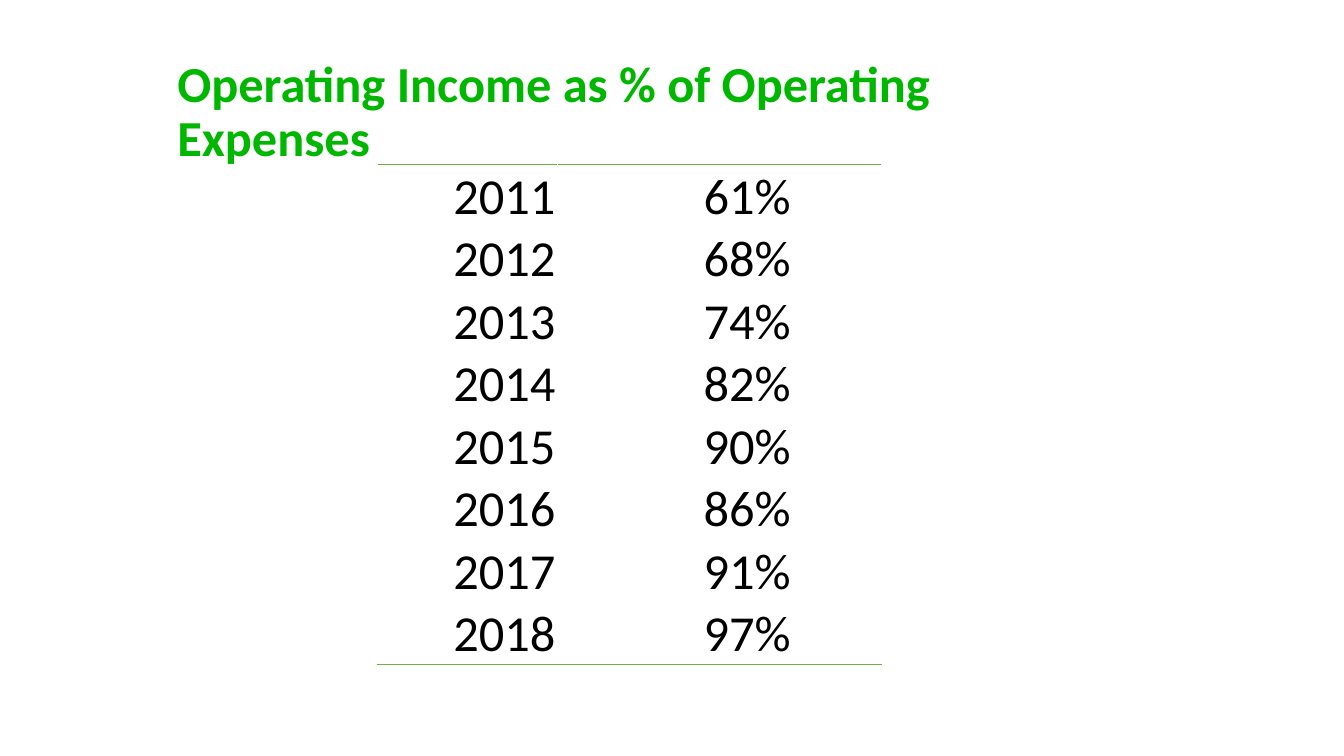
from lxml import etree
from pptx import Presentation
from pptx import util as u
from pptx.dml.color import RGBColor
from pptx.enum import text
from pptx.oxml.ns import qn

COLORS = {"title": "00B700", "body": "000000", "rule": "70AD47"}
ROWS = [("2011", "61%"), ("2012", "68%"), ("2013", "74%"), ("2014", "82%"),
        ("2015", "90%"), ("2016", "86%"), ("2017", "91%"), ("2018", "97%")]
COLUMNS = [(1.79, 0.02, text.PP_ALIGN.RIGHT), (3.21, 0.57, text.PP_ALIGN.CENTER)]


class Deck:
    def __init__(self):
        self.prs = Presentation()
        self.prs.slide_width = u.Inches(13.33)
        self.prs.slide_height = u.Inches(7.5)
        self.s = self.prs.slides.add_slide(self.prs.slide_layouts[6])
        self.font = {"name": "Calibri", "size": u.Pt(36)}

    def add_text(self, p, content, color, **formats):
        r = p.add_run()
        r.text = content
        for key, value in {**self.font, **formats}.items():
            setattr(r.font, key, value)
        r.font.color.rgb = RGBColor.from_string(COLORS[color])

    def title(self, content, *box):
        sp = self.s.shapes.add_textbox(*map(u.Inches, box))
        tf = sp.text_frame
        tf.word_wrap = True
        tf.vertical_anchor = text.MSO_ANCHOR.MIDDLE
        p = tf.paragraphs[0]
        p.line_spacing = 0.9
        self.add_text(p, content, "title", bold=True)

    def border(self, cell, side):
        ln = etree.Element(qn(f"a:{side}"), w=str(u.Pt(1)))
        fill = etree.SubElement(ln, qn("a:solidFill"))
        etree.SubElement(fill, qn("a:srgbClr"), val=COLORS["rule"])
        cell._tc.get_or_add_tcPr().insert(0, ln)

    def table(self, rows, columns, left, top, height, row_height):
        width = sum(column[0] for column in columns)
        frame = self.s.shapes.add_table(
            len(rows), len(columns), *map(u.Inches, (left, top, width, height)))
        tbl = frame.table
        tbl.first_row = tbl.horz_banding = False
        for row in tbl.rows:
            row.height = u.Inches(row_height)
        frame.height = u.Inches(height)
        for j, (column_width, inset, align) in enumerate(columns):
            tbl.columns[j].width = u.Inches(column_width)
            formats = {"margin_left": u.Inches(inset), "margin_right": u.Inches(0.02),
                       "margin_top": u.Inches(0.02), "margin_bottom": 0,
                       "vertical_anchor": text.MSO_ANCHOR.MIDDLE}
            for i, values in enumerate(rows):
                cell = tbl.cell(i, j)
                for key, value in formats.items():
                    setattr(cell, key, value)
                cell.fill.background()
                p = cell.text_frame.paragraphs[0]
                p.alignment = align
                self.add_text(p, values[j], "body")
            self.border(tbl.cell(0, j), "lnT")
            self.border(tbl.cell(len(rows) - 1, j), "lnB")


def main():
    deck = Deck()
    deck.title("Operating Income as % of Operating Expenses", 1.66, 0.4, 9.32, 1.45)
    deck.table(ROWS, COLUMNS, left=3.74, top=1.63, height=4.97, row_height=0.48)
    deck.prs.save("out.pptx")


if __name__ == "__main__":
    main()
